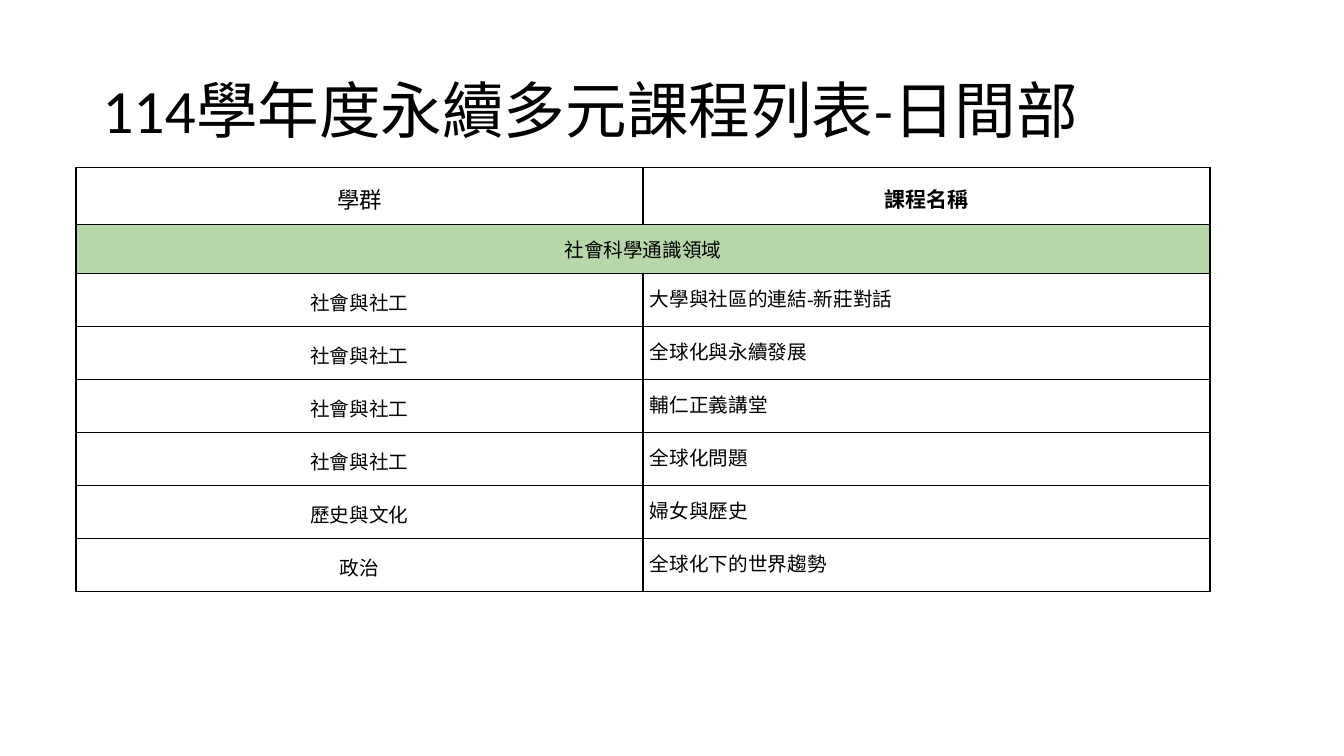
from pptx import Presentation
from pptx.dml.color import RGBColor
from pptx.enum.text import MSO_ANCHOR, PP_ALIGN
from pptx.oxml import parse_xml
from pptx.oxml.ns import nsdecls
from pptx.util import Pt

HEADS = [("學群", 16, False), ("課程名稱", 15, True)]
FIELD = "社會科學通識領域"
ROWS = [
    ("社會與社工", ["大學與社區的連結", "-", "新莊對話"]),
    ("社會與社工", ["全球化與永續發展"]),
    ("社會與社工", ["輔仁正義講堂"]),
    ("社會與社工", ["全球化問題"]),
    ("歷史與文化", ["婦女與歷史"]),
    ("政治", ["全球化下的世界趨勢"]),
]


def paint(hue):
    return RGBColor.from_string(hue)


def style(para, face, size, bold=False, align=PP_ALIGN.LEFT, lead=1.0):
    para.font.name = face
    para.font.size = Pt(size)
    para.font.bold = bold
    para.font.color.rgb = paint("000000")
    para.alignment = align
    para.line_spacing = lead


def border(cell):
    props = cell._tc.get_or_add_tcPr()
    for i, side in enumerate(("lnL", "lnR", "lnT", "lnB")):
        line = parse_xml(
            f'<a:{side} {nsdecls("a")} w="{Pt(1)}"><a:solidFill>'
            f'<a:srgbClr val="000000"/></a:solidFill></a:{side}>')
        props.insert(i, line)


def write(cell, parts, size=14, bold=False, align=PP_ALIGN.CENTER, lead=1.15):
    para = cell.text_frame.paragraphs[0]
    for part in parts:
        run = para.add_run()
        run.text = part
        if part == "-":
            run.font.name = "Times New Roman"
    style(para, "Arial", size, bold, align, lead)


def add_title(slide, left, top, width, height):
    box = slide.shapes.add_textbox(Pt(left), Pt(top), Pt(width), Pt(height))
    frame = box.text_frame
    frame.word_wrap = True
    frame.vertical_anchor = MSO_ANCHOR.MIDDLE
    para = frame.paragraphs[0]
    para.text = "114學年度永續多元課程列表-日間部"
    style(para, "Calibri", 44, lead=0.9)


def add_list(slide, left, top, width):
    tall = [40.7, 35] + [37.86] * len(ROWS)
    grid = slide.shapes.add_table(
        len(tall), 2, Pt(left), Pt(top), Pt(width), Pt(sum(tall))).table
    grid.first_row = grid.horz_banding = False
    for col in grid.columns:
        col.width = Pt(width / 2)
    for i, size in enumerate(tall):
        grid.rows[i].height = Pt(size)
        for cell in grid.rows[i].cells:
            cell.margin_left = cell.margin_right = Pt(5)
            cell.margin_top = cell.margin_bottom = Pt(7.2)
            cell.fill.solid()
            cell.fill.fore_color.rgb = paint("B6D7A8" if i == 1 else "FFFFFF")
            border(cell)

    for i, (text, size, bold) in enumerate(HEADS):
        cell = grid.cell(0, i)
        cell.vertical_anchor = MSO_ANCHOR.MIDDLE
        write(cell, [text], size, bold)
    grid.cell(1, 0).merge(grid.cell(1, 1))
    write(grid.cell(1, 0), [FIELD], lead=1.0)
    for i, (group, course) in enumerate(ROWS, 2):
        write(grid.cell(i, 0), [group])
        write(grid.cell(i, 1), course, align=PP_ALIGN.LEFT, lead=1.0)


def main():
    deck = Presentation()
    deck.slide_width, deck.slide_height = Pt(960), Pt(540)
    slide = deck.slides.add_slide(deck.slide_layouts[6])
    add_title(slide, 66, 28.75, 828, 104.38)
    add_list(slide, 54.3, 119.5, 810)
    deck.save("out.pptx")


if __name__ == "__main__":
    main()
